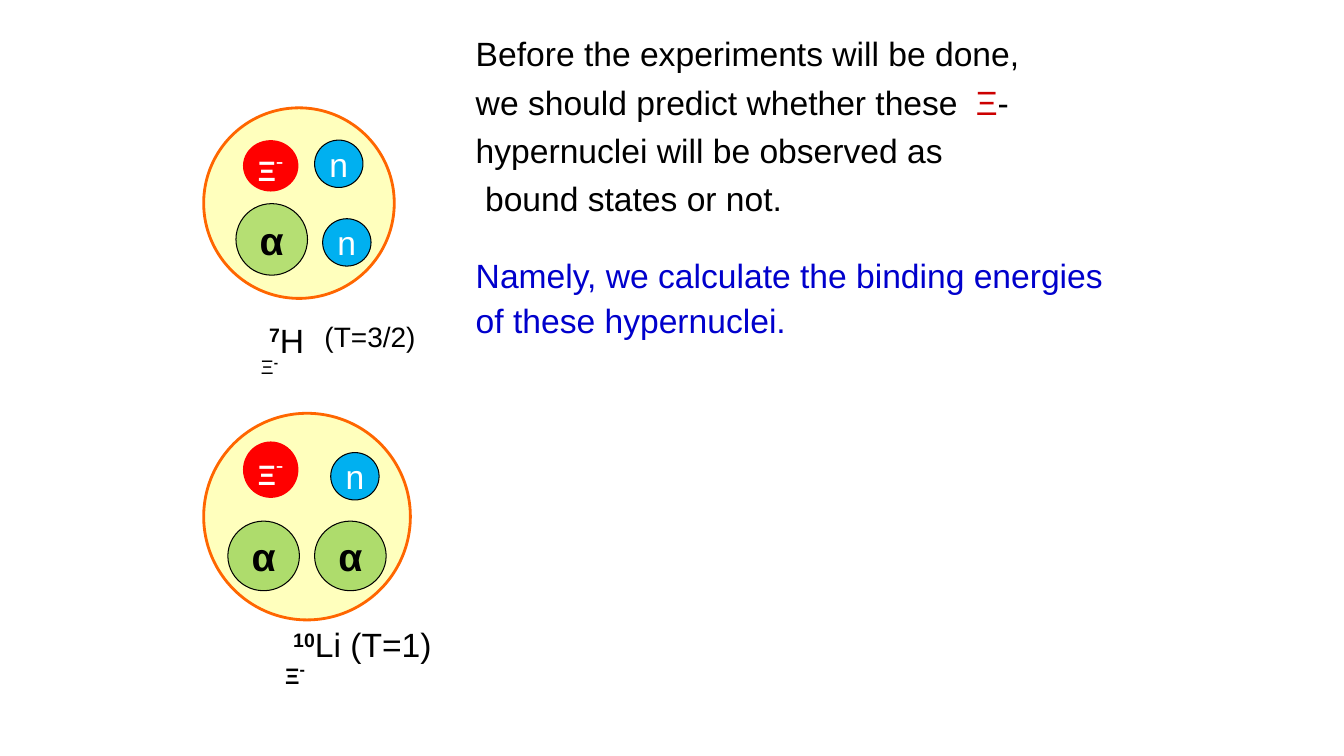
from dataclasses import dataclass

from lxml.etree import SubElement
from pptx import Presentation
from pptx.dml.color import RGBColor
from pptx.enum.shapes import MSO_SHAPE as SHAPE
from pptx.enum.text import MSO_ANCHOR as ANCHOR, MSO_AUTO_SIZE as AUTO, PP_ALIGN as ALIGN
from pptx.oxml.ns import qn
from pptx.util import Pt

PX = 9144  # 100 px to the inch


@dataclass(frozen=True)
class Theme:
    font: str = "Arial"
    black: str = "000000"
    white: str = "FFFFFF"
    blue: str = "0000CC"
    crimson: str = "CC0000"
    shell: str = "FFFF00"
    shell_line: str = "FF6600"
    alpha: str = "92D050"
    xi: str = "FF0000"
    neutron: str = "00B0F0"
    tiny: int = 14
    small: int = 16
    medium: int = 20
    body: int = 24
    large: int = 28


T = Theme()


def px(*lengths):
    return [n * PX for n in lengths]


def add_run(p, text, size=T.body, color=T.black, bold=False, raised=False):
    r = p.add_run()
    r.text = text
    f = r.font
    f.name, f.size, f.bold = T.font, Pt(size), bold
    f.color.rgb = RGBColor.from_string(color)
    if raised:
        r._r.get_or_add_rPr().set("baseline", "30000")


def add_text(s, box, wrap=False):
    """Add a text box that grows with its text; return its text frame."""
    tf = s.shapes.add_textbox(*px(*box)).text_frame
    tf.word_wrap = wrap
    tf.auto_size = AUTO.SHAPE_TO_FIT_TEXT
    return tf


def add_label(s, box, *runs):
    p = add_text(s, box).paragraphs[0]
    for text, style in runs:
        add_run(p, text, **style)


def add_circle(s, box, fill, opacity=100, line=None, weight=0.75):
    sp = s.shapes.add_shape(SHAPE.OVAL, *px(*box))
    sp.shadow.inherit = False
    sp.fill.solid()
    sp.fill.fore_color.rgb = RGBColor.from_string(fill)
    if opacity < 100:
        clr = sp._element.spPr.find(qn("a:solidFill"))[0]
        SubElement(clr, qn("a:alpha")).set("val", str(opacity * 1000))
    if line:
        sp.line.color.rgb = RGBColor.from_string(line)
        sp.line.width = Pt(weight)
    else:
        sp.line.fill.background()
    return sp


def centred_paragraph(sp):
    tf = sp.text_frame
    tf.word_wrap = False
    tf.vertical_anchor = ANCHOR.MIDDLE
    p = tf.paragraphs[0]
    p.alignment = ALIGN.CENTER
    return p


def add_shell(s, left, top, size):
    add_circle(s, (left, top, size, size), T.shell, 26, T.shell_line, 2)


def add_alpha(s, left, top, height, opacity):
    sp = add_circle(s, (left, top, 71, height), T.alpha, opacity, T.black)
    add_run(centred_paragraph(sp), "α", T.large, bold=True)


def add_xi(s, left, top, height):
    p = centred_paragraph(add_circle(s, (left, top, 55, height), T.xi))
    add_run(p, "Ξ", T.medium, T.white, bold=True)
    add_run(p, "-", T.large, T.white, raised=True)


def add_neutron(s, left, top):
    sp = add_circle(s, (left, top, 48, 47), T.neutron, line=T.black)
    add_run(centred_paragraph(sp), "n", color=T.white)


def add_hydrogen(s):
    add_shell(s, 202, 107, 189)
    add_label(s, (257, 312, 57, 50),
              ("7", dict(bold=True, raised=True)), ("H", {}))
    add_label(s, (249, 344, 38, 34), ("Ξ", dict(size=T.tiny)),
              ("-", dict(size=T.small, bold=True, raised=True)))
    add_alpha(s, 234, 202, 71, 68)
    add_xi(s, 241, 139, 51)
    for left, top in ((312, 139), (320, 217)):
        add_neutron(s, left, top)
    add_label(s, (312, 312, 114, 43), ("(T=3/2)", dict(size=T.medium)))


def add_lithium(s):
    add_label(s, (281, 614, 161, 50),
              ("10", dict(bold=True, raised=True)), ("Li (T=1)", {}))
    add_label(s, (273, 646, 41, 37), ("Ξ", dict(size=T.small, bold=True)),
              ("-", dict(size=T.medium, bold=True, raised=True)))
    add_shell(s, 202, 410, 205)
    for left in (226, 312):
        add_alpha(s, left, 517, 69, 74)
    add_xi(s, 241, 438, 56)
    add_neutron(s, 328, 449)


def add_statement(s):
    lines = (  # text, colour, line spacing, points before
        ("Before the experiments will be done,", T.black, 1.0, 0),
        ("we should predict whether these", T.black, 1.2, 0),
        ("hypernuclei will be observed as", T.black, 1.2, 0),
        (" bound states or not.", T.black, 1.2, 0),
        ("Namely, we calculate the binding energies", T.blue, 1.1, 23),
        ("of these hypernuclei.", T.blue, 1.1, 0.5),
    )
    tf = add_text(s, (462, 28, 705, 317), wrap=True)
    for i, (text, color, spacing, before) in enumerate(lines):
        p = tf.add_paragraph() if i else tf.paragraphs[0]
        p.line_spacing = spacing
        p.space_before = Pt(before)
        add_run(p, text, color=color)
    add_label(s, (958, 76, 53, 50), ("Ξ", dict(color=T.crimson)), ("-", {}))


def main():
    prs = Presentation()
    prs.slide_width, prs.slide_height = px(1333, 750)
    s = prs.slides.add_slide(prs.slide_layouts[6])
    add_hydrogen(s)
    add_lithium(s)
    add_statement(s)
    prs.save("out.pptx")


if __name__ == "__main__":
    main()
